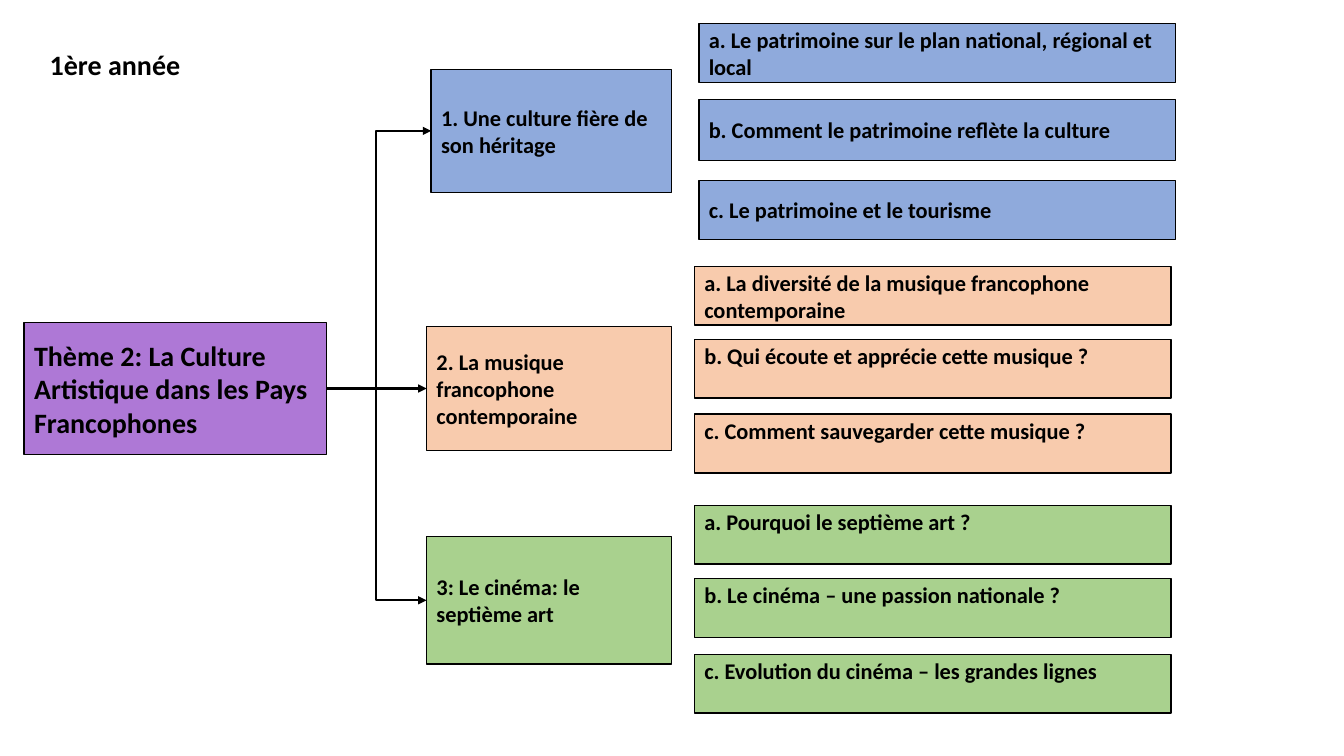
from lxml import etree
from pptx import Presentation
from pptx.dml.color import RGBColor
from pptx.enum.shapes import MSO_CONNECTOR, MSO_SHAPE
from pptx.enum.text import MSO_ANCHOR, PP_ALIGN
from pptx.oxml.ns import qn
from pptx.util import Pt

RECTANGLE = MSO_SHAPE.RECTANGLE
STRAIGHT, ELBOW = MSO_CONNECTOR.STRAIGHT, MSO_CONNECTOR.ELBOW
TOP, MIDDLE = MSO_ANCHOR.TOP, MSO_ANCHOR.MIDDLE
LEFT = PP_ALIGN.LEFT
LEFT_SIDE, RIGHT_SIDE = 1, 3

BLACK = RGBColor(0x00, 0x00, 0x00)
PURPLE = RGBColor(0xAE, 0x78, 0xD6)
BLUE = RGBColor(0x8F, 0xAA, 0xDC)
PEACH = RGBColor(0xF8, 0xCB, 0xAD)
GREEN = RGBColor(0xA9, 0xD1, 0x8E)

TRUNK_X = 268.5
TOPIC_RIGHT = 479.6
SUBTOPIC_WIDTH = 340.6

# Topic: text, colour, left, top, height, subtopic left, subtopic anchor,
# then its subtopics as text, top, height
TOPICS = [
    ("1. Une culture fière de son héritage", BLUE, 308, 49.5, 88, 499.2, MIDDLE, [
        ("a. Le patrimoine sur le plan national, régional et local", 16.8, 42),
        ("b. Comment le patrimoine reflète la culture", 71, 43.6),
        ("c. Le patrimoine et le tourisme", 129, 42),
    ]),
    ("2. La musique francophone contemporaine", PEACH, 304.7, 233.2, 88.6, 496, TOP, [
        ("a. La diversité de la musique francophone contemporaine", 190.2, 42),
        ("b. Qui écoute et apprécie cette musique ?", 242.4, 42),
        ("c. Comment sauvegarder cette musique ?", 295.8, 42),
    ]),
    ("3: Le cinéma: le septième art", GREEN, 304.7, 383.2, 91.2, 496, TOP, [
        ("a. Pourquoi le septième art ?", 361, 42),
        ("b. Le cinéma – une passion nationale ?", 413.2, 42),
        ("c. Evolution du cinéma – les grandes lignes", 467.4, 42),
    ]),
]


def write_bold(frame, text, size):
    paragraph = frame.paragraphs[0]
    paragraph.alignment = LEFT
    run = paragraph.add_run()
    run.text = text
    run.font.name = "Calibri"
    run.font.size = Pt(size)
    run.font.bold = True
    run.font.color.rgb = BLACK


def add_box(text, colour, left, top, width, height, size=16, anchor=MIDDLE):
    box = slide.shapes.add_shape(RECTANGLE, Pt(left), Pt(top), Pt(width), Pt(height))
    box.shadow.inherit = False
    box.fill.solid()
    box.fill.fore_color.rgb = colour
    box.line.color.rgb = BLACK
    box.line.width = Pt(1)
    frame = box.text_frame
    frame.word_wrap = True
    frame.vertical_anchor = anchor
    frame.margin_top = frame.margin_bottom = Pt(2)
    write_bold(frame, text, size)
    return box


prs = Presentation()
prs.slide_width, prs.slide_height = Pt(960), Pt(540)
slide = prs.slides.add_slide(prs.slide_layouts[6])

theme = add_box("Thème 2: La Culture Artistique dans les Pays Francophones",
                PURPLE, 17.3, 230.4, 216, 94.2, size=20)
theme_right = theme.left + theme.width
theme_middle = theme.top + theme.height // 2

for text, colour, left, top, height, sub_left, sub_anchor, subtopics in TOPICS:
    topic = add_box(text, colour, left, top, TOPIC_RIGHT - left, height)
    for sub_text, sub_top, sub_height in subtopics:
        add_box(sub_text, colour, sub_left, sub_top, SUBTOPIC_WIDTH, sub_height,
                anchor=sub_anchor)

    topic_middle = topic.top + topic.height // 2
    level = abs(topic_middle - theme_middle) < Pt(1)
    start_x = Pt(250) if level else theme_right
    arrow = slide.shapes.add_connector(STRAIGHT if level else ELBOW,
                                       start_x, theme_middle, topic.left, topic_middle)
    if not level:
        arrow.begin_connect(theme, RIGHT_SIDE)
    arrow.end_connect(topic, LEFT_SIDE)
    arrow.line.color.rgb = BLACK
    arrow.line.width = Pt(1.5)
    properties = arrow.line._get_or_add_ln()
    etree.SubElement(properties, qn("a:tailEnd"), type="triangle")
    etree.SubElement(arrow._element.spPr, qn("a:effectLst"))
    if not level:
        bend = round(100000 * (Pt(TRUNK_X) - theme_right) / (topic.left - theme_right))
        guides = arrow._element.spPr.find(qn("a:prstGeom")).find(qn("a:avLst"))
        etree.SubElement(guides, qn("a:gd"), name="adj1", fmla=f"val {bend}")

year = slide.shapes.add_textbox(Pt(28.4), Pt(30.4), Pt(108.6), Pt(31.5))
year.text_frame.word_wrap = False
write_bold(year.text_frame, "1ère année", 20)

prs.save("out.pptx")
